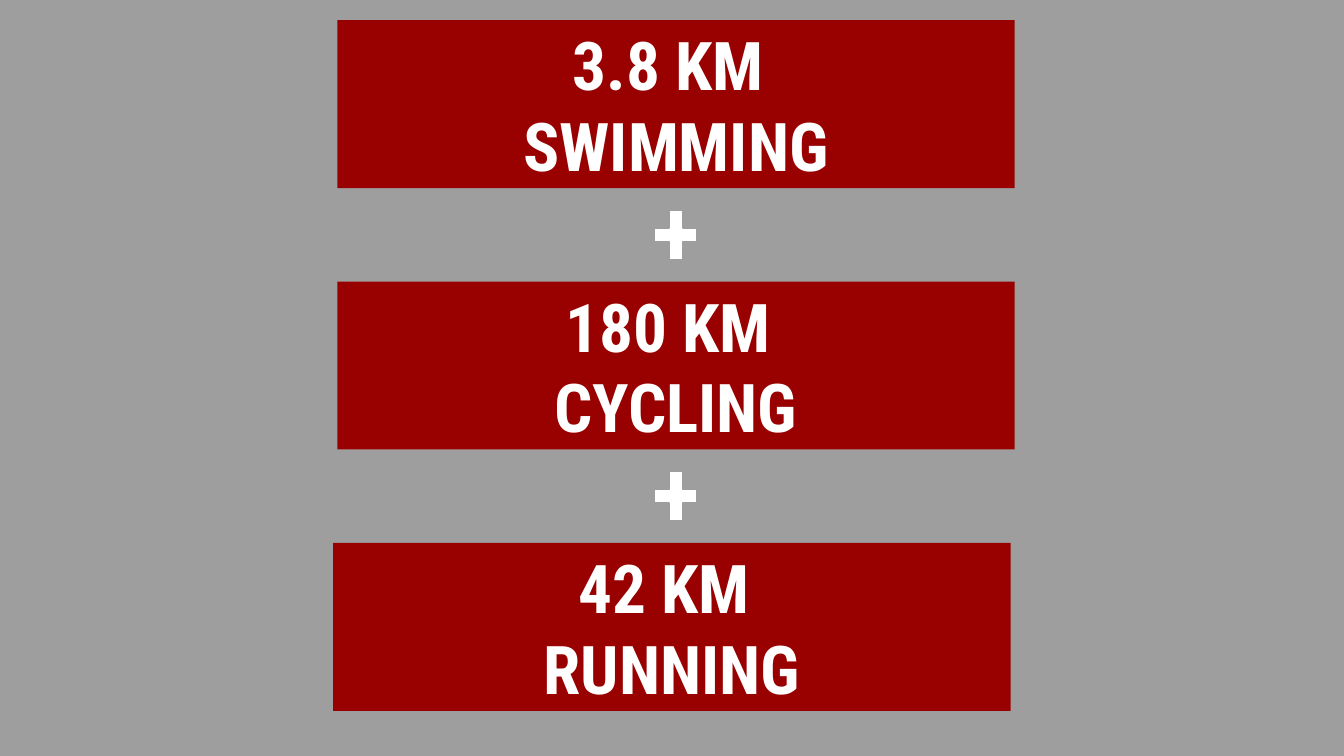
import pptx
import pptx.dml.color
import pptx.enum.shapes
import pptx.enum.text
import pptx.util

Inches = pptx.util.Inches
Pt = pptx.util.Pt
Shape = pptx.enum.shapes.MSO_SHAPE


def color(code):
    return pptx.dml.color.RGBColor.from_string(code)


class Deck:
    """Hold the style and the current slide, and draw each kind of element."""

    font = "Roboto Condensed"
    size = 36
    gray = "9E9E9E"
    red = "990000"
    white = "FFFFFF"

    def __init__(self, width, height):
        self.file = pptx.Presentation()
        self.file.slide_width = Inches(width)
        self.file.slide_height = Inches(height)
        self.slide = self.file.slides.add_slide(self.file.slide_layouts[6])
        self.paint(self.slide.background.fill, self.gray)

    def paint(self, fill, code):
        fill.solid()
        fill.fore_color.rgb = color(code)

    def shape(self, kind, box, code):
        item = self.slide.shapes.add_shape(kind, *map(Inches, box))
        item.shadow.inherit = False
        self.paint(item.fill, code)
        return item

    def panel(self, box, lines):
        item = self.shape(Shape.RECTANGLE, box, self.red)
        item.line.fill.background()
        frame = item.text_frame
        frame.word_wrap = True
        frame.vertical_anchor = pptx.enum.text.MSO_ANCHOR.MIDDLE
        frame.margin_left = frame.margin_right = Inches(0.1)
        frame.margin_top = frame.margin_bottom = Inches(0.1)
        frame.text = "\n".join(lines)
        for para in frame.paragraphs:
            para.alignment = pptx.enum.text.PP_ALIGN.CENTER
            para.font.name = self.font
            para.font.size = Pt(self.size)
            para.font.bold = True
            para.font.color.rgb = color(self.white)

    def plus(self, box):
        item = self.shape(Shape.MATH_PLUS, box, self.white)
        item.adjustments[0] = 0.24
        item.line.color.rgb = color(self.gray)
        item.line.width = Pt(0.75)


def main():
    width = 10
    deck = Deck(width, width * 9 / 16)
    legs = [
        (2.51, "3.8 KM ", "SWIMMING"),
        (2.51, "180 KM ", "CYCLING"),
        (2.48, "42 KM ", "RUNNING"),
    ]
    first, last = 0.15, 4.04
    pitch = (last - first) / (len(legs) - 1)
    wide, high = 5.04, 1.25
    arm, tall = 0.43, 0.5
    gap = (pitch - high - tall) / 2

    for row, (left, *lines) in enumerate(legs):
        top = first + row * pitch
        deck.panel((left, top, wide, high), lines)
        if row < len(legs) - 1:
            deck.plus((left + (wide - arm) / 2, top + high + gap, arm, tall))

    deck.file.save("out.pptx")


if __name__ == "__main__":
    main()
